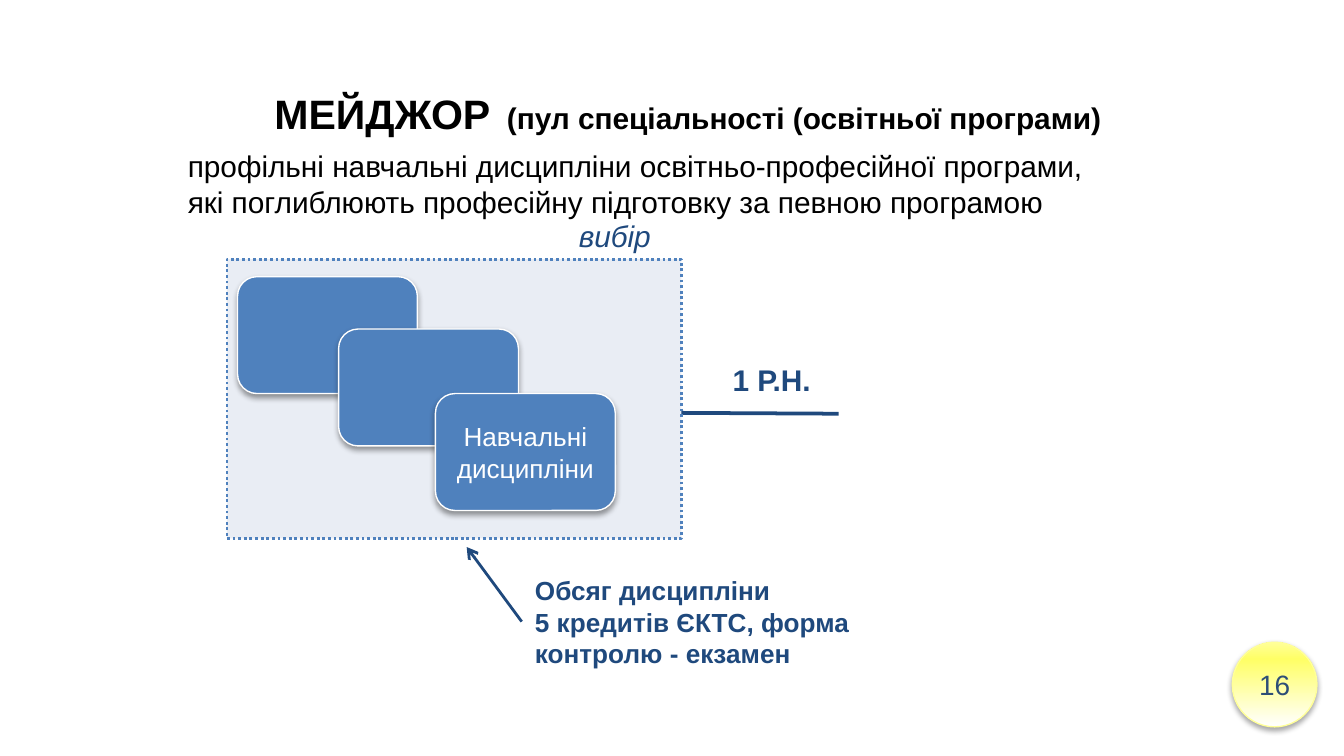
from lxml import etree
from pptx import Presentation
from pptx.dml.color import RGBColor
from pptx.enum.dml import MSO_LINE
from pptx.enum.shapes import MSO_CONNECTOR, MSO_SHAPE
from pptx.enum.text import MSO_ANCHOR, PP_ALIGN
from pptx.oxml import parse_xml
from pptx.oxml.ns import nsdecls, qn
from pptx.util import Cm, Pt

RECT, ROUNDED, OVAL = MSO_SHAPE.RECTANGLE, MSO_SHAPE.ROUNDED_RECTANGLE, MSO_SHAPE.OVAL
STRAIGHT = MSO_CONNECTOR.STRAIGHT
DOTTED = MSO_LINE.ROUND_DOT
LEFT, CENTER = PP_ALIGN.LEFT, PP_ALIGN.CENTER
TOP, MIDDLE = MSO_ANCHOR.TOP, MSO_ANCHOR.MIDDLE
FONT = "Arial"
COLORS = {
    "black": "000000",
    "white": "FFFFFF",
    "navy": "1F497D",
    "blue": "4F81BD",
    "panel": "E9EDF4",
    "number": "2D4E77",
    "pale": "FFFF99",
    "yellow": "FFFF66",
}


def rgb(name):
    return RGBColor.from_string(COLORS[name])


def style(span, size, color, bold=False, italic=False):
    span.font.name = FONT
    span.font.size = Pt(size)
    span.font.bold = bold
    span.font.italic = italic
    span.font.color.rgb = rgb(color)


def fill_text(shape, text, size, color, align=CENTER, bold=False, italic=False):
    frame = shape.text_frame
    frame.word_wrap = True
    frame.vertical_anchor = MIDDLE
    frame.text = text
    for para in frame.paragraphs:
        para.alignment = align
        for span in para.runs:
            style(span, size, color, bold, italic)


def add_label(page, box, text, size, **options):
    label = page.shapes.add_textbox(*map(Cm, box))
    fill_text(label, text, size, "navy", **options)


def add_block(page, kind, box, fill, line, width):
    block = page.shapes.add_shape(kind, *map(Cm, box))
    block.shadow.inherit = False
    block.fill.solid()
    block.fill.fore_color.rgb = rgb(fill)
    block.line.color.rgb = rgb(line)
    block.line.width = Pt(width)
    return block


def add_shadow(shape, opacity):
    effects = shape.element.spPr.find(qn("a:effectLst"))
    effects.append(parse_xml(
        f'<a:outerShdw {nsdecls("a")} blurRad="{Pt(3.1)}" dist="{Pt(1.7)}" '
        f'dir="5400000" rotWithShape="0"><a:srgbClr val="{COLORS["black"]}">'
        f'<a:alpha val="{opacity * 1000}"/></a:srgbClr></a:outerShdw>'))


def add_line(page, start, end, width, arrow=False):
    line = page.shapes.add_connector(STRAIGHT, *map(Cm, start + end))
    line.line.color.rgb = rgb("navy")
    line.line.width = Pt(width)
    if arrow:
        etree.SubElement(line.line._get_or_add_ln(), qn("a:tailEnd"), type="arrow")
    etree.SubElement(line.element.spPr, qn("a:effectLst"))


def add_heading(page, box):
    frame = page.shapes.add_textbox(*map(Cm, box)).text_frame
    frame.word_wrap = True
    frame.vertical_anchor = TOP
    frame.margin_top = Cm(0.2)
    title = frame.paragraphs[0]
    title.alignment = CENTER
    for text, size in (("МЕЙДЖОР", 22), (" ", 32),
                       ("(пул спеціальності (освітньої програми)", 16)):
        span = title.add_run()
        span.text = text
        style(span, size, "black", bold=True)
    para = frame.add_paragraph()
    para.text = ("профільні навчальні дисципліни освітньо-професійної програми,\v"
                 "які поглиблюють професійну підготовку за певною програмою")
    para.space_before = Pt(3.2)
    for span in para.runs:
        style(span, 16, "black")


def add_choice_panel(page, box):
    left, top, width, height = box
    add_line(page, (left + 2.29, top + 2.87), (left + 11.56, top + 2.92), 2)
    panel = add_block(page, RECT, box, "panel", "blue", 1.5)
    panel.line.dash_style = DOTTED
    add_label(page, (left + 5.03, top - 0.84, 4.6, 0.79), "вибір", 16, italic=True)
    add_label(page, (left + width + 0.51, top + 1.73, 2.39, 1.09), "1 Р.Н.", 16, bold=True)
    for across, down, text in ((0.2, 0.33, ""), (2.11, 1.32, ""),
                               (3.94, 2.54, "Навчальні дисципліни")):
        card = add_block(page, ROUNDED, (left + across, top + down, 3.4, 2.21),
                         "blue", "white", 0.75)
        add_shadow(card, 38)
        if text:
            fill_text(card, text, 14, "white")


def add_volume_note(page, box):
    left, top, width, height = box
    add_label(page, box, "Обсяг дисципліни\n5 кредитів ЄКТС, форма контролю - екзамен",
              14, align=LEFT, bold=True)
    add_line(page, (left, top + height / 2), (left - 1.04, top - 0.51), 1.5, arrow=True)


def add_page_number(page, box):
    badge = add_block(page, OVAL, box, "yellow", "pale", 0.75)
    badge.fill.gradient()
    gradient = badge.element.spPr.find(qn("a:gradFill"))
    stops = "".join(
        f'<a:gs pos="{place * 1000}"><a:srgbClr val="{COLORS[color]}"/></a:gs>'
        for place, color in ((0, "white"), (80, "yellow"), (100, "pale")))
    gradient.getparent().replace(gradient, parse_xml(
        f'<a:gradFill {nsdecls("a")} rotWithShape="1"><a:gsLst>{stops}</a:gsLst>'
        '<a:lin ang="16200000" scaled="0"/></a:gradFill>'))
    add_shadow(badge, 35)
    fill_text(badge, "16", 15, "number")


def main():
    deck = Presentation()
    deck.slide_width, deck.slide_height = Cm(25.4), Cm(14.29)
    page = deck.slides.add_slide(deck.slide_layouts[6])
    add_heading(page, (3.3, 1.12, 19.41, 3.43))
    add_choice_panel(page, (4.29, 4.9, 8.59, 5.28))
    add_volume_note(page, (9.86, 10.85, 6.63, 1.8))
    add_page_number(page, (23.29, 12.14, 1.6, 1.6))
    deck.save("out.pptx")


if __name__ == "__main__":
    main()
